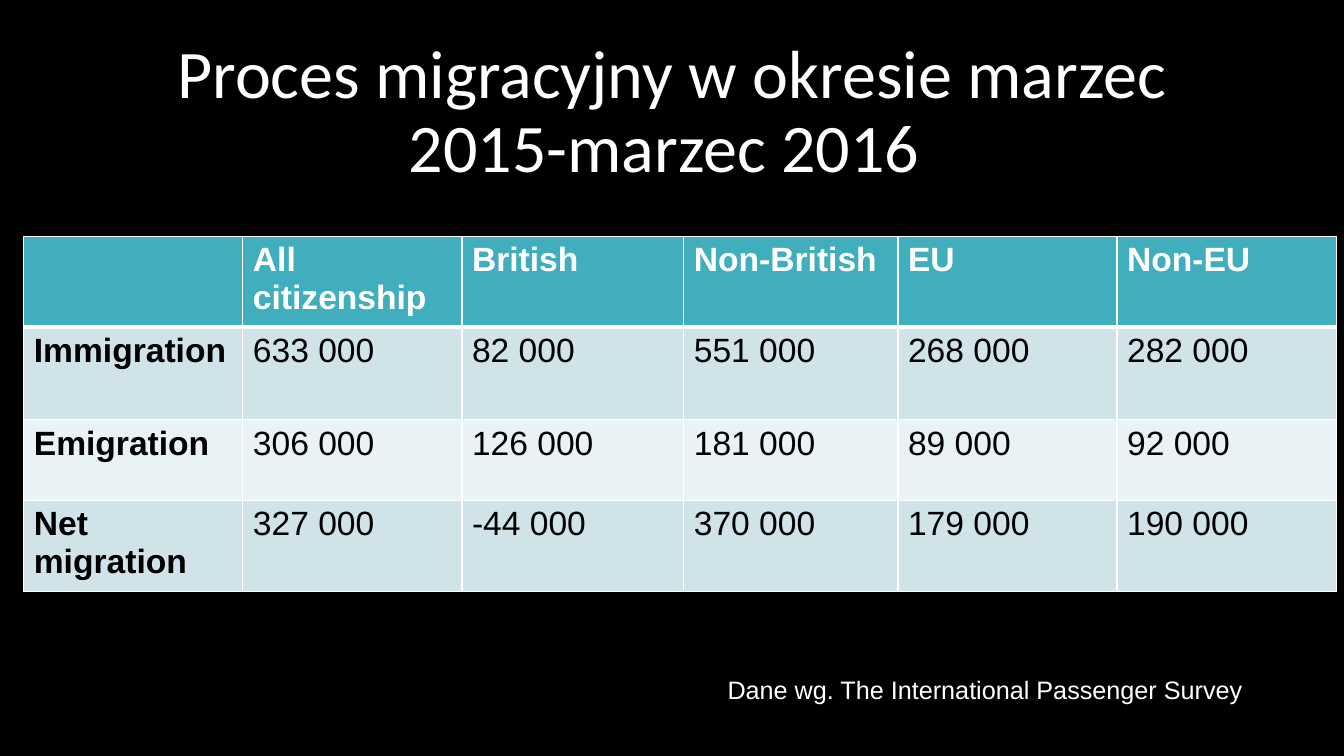
from lxml import etree
from pptx import Presentation
from pptx.dml.color import RGBColor
from pptx.enum import text
from pptx.oxml import ns
from pptx.util import Pt

COLOURS = {
    "background": "000000",
    "light": "FFFFFF",
    "dark": "000000",
    "header": "41AEBD",
    "odd": "CFE3E8",
    "even": "E9F2F4",
}
ROWS = [
    ["", "All citizenship", "British", "Non-British", "EU", "Non-EU"],
    ["Immigration", "633 000", "82 000", "551 000", "268 000", "282 000"],
    ["Emigration", "306 000", "126 000", "181 000", "89 000", "92 000"],
    ["Net migration", "327 000", "-44 000", "370 000", "179 000", "190 000"],
]
COLUMN_WIDTHS = [156.5, 156.5, 158.5, 153, 156.5, 156.5]
ROW_HEIGHTS = [60.5, 66.2, 57.6, 60.5]


def write(frame, words, colour, **font_format):
    paragraph = frame.paragraphs[0]
    run = paragraph.add_run()
    run.text = words
    run.font.color.rgb = RGBColor.from_string(COLOURS[colour])
    for name, value in font_format.items():
        setattr(run.font, name, value)
    return paragraph


def add_border(cell, side, width):
    """Draw one white edge of a cell; side is L, R, T or B."""
    line = etree.SubElement(cell._tc.get_or_add_tcPr(), ns.qn(f"a:ln{side}"), w=str(Pt(width)))
    fill = etree.SubElement(line, ns.qn("a:solidFill"))
    etree.SubElement(fill, ns.qn("a:srgbClr"), val=COLOURS["light"])


presentation = Presentation()
presentation.slide_width, presentation.slide_height = Pt(960), Pt(540)
slide = presentation.slides.add_slide(presentation.slide_layouts[6])
slide.background.fill.solid()
slide.background.fill.fore_color.rgb = RGBColor.from_string(COLOURS["background"])

title = slide.shapes.add_textbox(Pt(66), Pt(28.75), Pt(828), Pt(104.4)).text_frame
title.word_wrap = True
title.vertical_anchor = text.MSO_ANCHOR.MIDDLE
heading = write(title, "Proces migracyjny w okresie marzec 2015-marzec 2016 ", "light",
                name="Calibri", size=Pt(48.6))
heading.alignment = text.PP_ALIGN.CENTER
heading.line_spacing = 0.9

table = slide.shapes.add_table(
    len(ROWS), len(COLUMN_WIDTHS), Pt(17), Pt(168.8),
    Pt(sum(COLUMN_WIDTHS)), Pt(sum(ROW_HEIGHTS))).table
for column, width in zip(table.columns, COLUMN_WIDTHS):
    column.width = Pt(width)
for row, height in zip(table.rows, ROW_HEIGHTS):
    row.height = Pt(height)

for i, values in enumerate(ROWS):
    band = "header" if i == 0 else "odd" if i % 2 else "even"
    border_widths = {"L": 1, "R": 1, "T": 3 if i == 1 else 1, "B": 3 if i == 0 else 1}
    for j, value in enumerate(values):
        cell = table.cell(i, j)
        for side, width in border_widths.items():
            add_border(cell, side, width)
        cell.fill.solid()
        cell.fill.fore_color.rgb = RGBColor.from_string(COLOURS[band])
        if value:
            write(cell.text_frame, value, "dark" if i else "light",
                  name="Arial", size=Pt(24), bold=i == 0 or j == 0)

credit = slide.shapes.add_textbox(Pt(512.6), Pt(478), Pt(475), Pt(29)).text_frame
credit.word_wrap = True
credit.auto_size = text.MSO_AUTO_SIZE.SHAPE_TO_FIT_TEXT
write(credit, "Dane wg. The International Passenger Survey", "light", name="Arial", size=Pt(18))

presentation.save("out.pptx")
